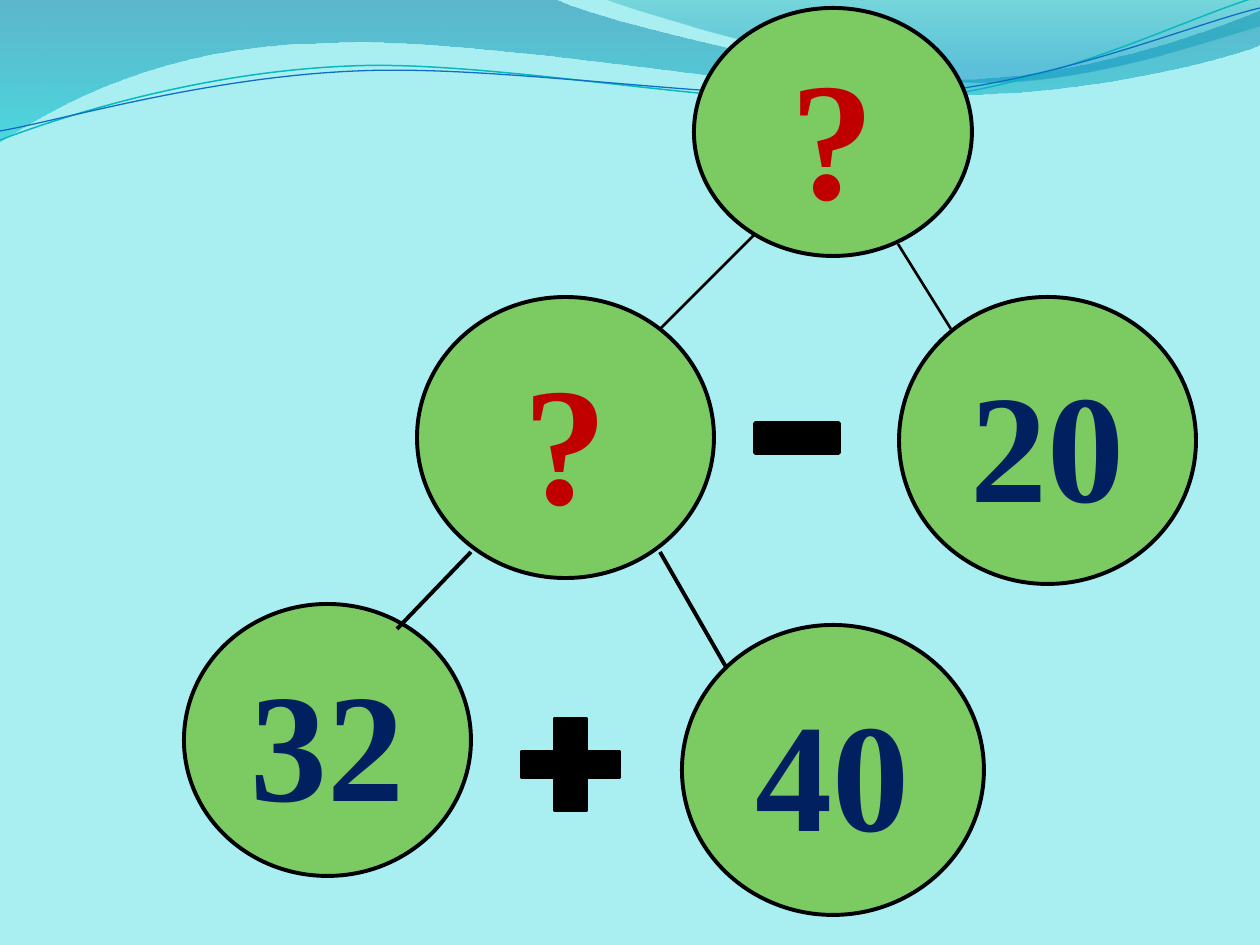
from pptx import Presentation
from pptx.dml.color import RGBColor
from pptx.enum.shapes import MSO_CONNECTOR, MSO_SHAPE
from pptx.enum.text import MSO_ANCHOR, PP_ALIGN
from pptx.oxml.ns import qn
from pptx.util import Emu, Pt
from lxml import etree

OVAL, CROSS = MSO_SHAPE.OVAL, MSO_SHAPE.CROSS
LINE = MSO_CONNECTOR.STRAIGHT
CENTER, MIDDLE = PP_ALIGN.CENTER, MSO_ANCHOR.MIDDLE
SCALE = 914400 / 126  # EMU per px
hue = RGBColor.from_string


def px(n):
    return Emu(round(n * SCALE))


def write(shape, text, size=88, color="002060", font="Times New Roman"):
    frame = shape.text_frame
    frame.word_wrap = True
    frame.vertical_anchor = MIDDLE
    par = frame.paragraphs[0]
    par.alignment = CENTER
    run = par.add_run()
    run.text = text
    run.font.name, run.font.size, run.font.bold = font, Pt(size), True
    run.font.color.rgb = hue(color)


prs = Presentation()
prs.slide_width, prs.slide_height = px(1260), px(945)
slide = prs.slides.add_slide(prs.slide_layouts[6])
shapes = slide.shapes
master = prs.slide_master.element.cSld.spTree

# Background, 35 % opaque
back = slide.background.fill
back.solid()
back.fore_color.rgb = hue("0BD0D9")
tint = next(slide.element.cSld.iter(qn("a:srgbClr")))
etree.SubElement(tint, qn("a:alpha"), val="35000")

# Waves: a start, then points (2 numbers) or cubic curves (6 numbers);
# bands have gradient stops (position, color, opacity), strands a line
waves = [
    ([(0, 0), (554, -1), (600, 21, 837, 79, 955, 79),
      (1074, 79, 1207, 33, 1260, 11), (1261, 45),
      (1239, 55, 1096, 96, 940, 95), (783, 95, 481, 35, 324, 43),
      (163, 45, 58, 105, -1, 142)],
     [(0, "0074A1", 45), (1, "00C6CF", 55)], None),
    ([(604, -1), (641, 14, 859, 78, 969, 82),
      (1079, 87, 1211, 40, 1260, 26), (1260, 0)],
     [(0, "00A1A9", 30), (0.8, "008BBF", 45)], None),
    ([(0, 140), (60, 117, 199, 72, 349, 66),
      (498, 59, 747, 112, 898, 101), (1050, 89, 1182, 19, 1257, -3)],
     None, ("0AB8BF", 0.85)),
    ([(0, 131), (59, 121, 207, 77, 357, 71),
      (508, 64, 752, 106, 903, 95), (1053, 84, 1186, 26, 1260, 8)],
     None, ("0F6FC6", 0.75)),
]
for rank, (route, stops, line) in enumerate(waves):
    pen = shapes.build_freeform(*map(px, route[0]))
    pen.add_line_segments([tuple(map(px, step[-2:])) for step in route[1:]],
                          close=bool(stops))
    wave = pen.convert_to_shape()
    wave.shadow.inherit = False

    # Bend the straight segments that are curves
    legs = list(wave.element.spPr.iter(qn("a:lnTo")))
    for leg, step in zip(legs, route[1:]):
        if len(step) == 6:
            leg.tag = qn("a:cubicBezTo")
            bends = []
            for x, y in (step[:2], step[2:4]):
                bends.append(etree.Element(qn("a:pt"),
                                           x=str(px(x) - wave.left),
                                           y=str(px(y) - wave.top)))
            leg[:0] = bends

    if stops:
        wave.line.fill.background()
        wave.fill.gradient()
        wave.fill.gradient_angle = 270
        for stop, (pos, color, _) in zip(wave.fill.gradient_stops, stops):
            stop.position = pos
            stop.color.rgb = hue(color)
        tints = wave.element.spPr.find(qn("a:gradFill")).iter(qn("a:srgbClr"))
        for tint, (_, _, part) in zip(list(tints), stops):
            etree.SubElement(tint, qn("a:alpha"), val=str(part * 1000))
    else:
        wave.fill.background()
        wave.line.color.rgb = hue(line[0])
        wave.line.width = Pt(line[1])

    # The waves belong to the master
    wave.element.nvSpPr.cNvPr.set("id", str(100 + rank))
    master.append(wave.element)

# Number circles and the operator signs between them
ask = dict(size=96, color="C00000")
nodes = [
    (OVAL, (184, 604, 287, 272), "32", {}),
    (OVAL, (682, 625, 302, 290), "40", {}),
    (CROSS, (521, 718, 99, 93), 0.36, 1.5),  # plus
    (OVAL, (694, 8, 278, 248), "?", ask),
    (OVAL, (899, 297, 297, 287), "20", {}),
    (CROSS, (755, 423, 84, 30), 0.01, 2),    # minus
    (OVAL, (417, 297, 297, 281), "?", ask),
]
for kind, box, mark, look in nodes:
    node = shapes.add_shape(kind, *map(px, box))
    node.shadow.inherit = False
    node.fill.solid()
    node.line.color.rgb = hue("000000")
    if kind == OVAL:
        node.fill.fore_color.rgb = hue("7CCA62")
        node.line.width = Pt(2.25)
        write(node, mark, **look)
    else:
        node.fill.fore_color.rgb = hue("000000")
        node.line.width = Pt(look)
        node.adjustments[0] = mark

# Branches of the tree
branches = [
    (660, 329, 755, 234, 1.5),
    (471, 552, 397, 629, 2.25),
    (660, 552, 726, 667, 2.25),
    (898, 244, 951, 329, 1.5),
]
for *ends, width in branches:
    branch = shapes.add_connector(LINE, *map(px, ends))
    branch.line.color.rgb = hue("000000")
    branch.line.width = Pt(width)
    etree.SubElement(branch.element.spPr, qn("a:effectLst"))

prs.save("out.pptx")
